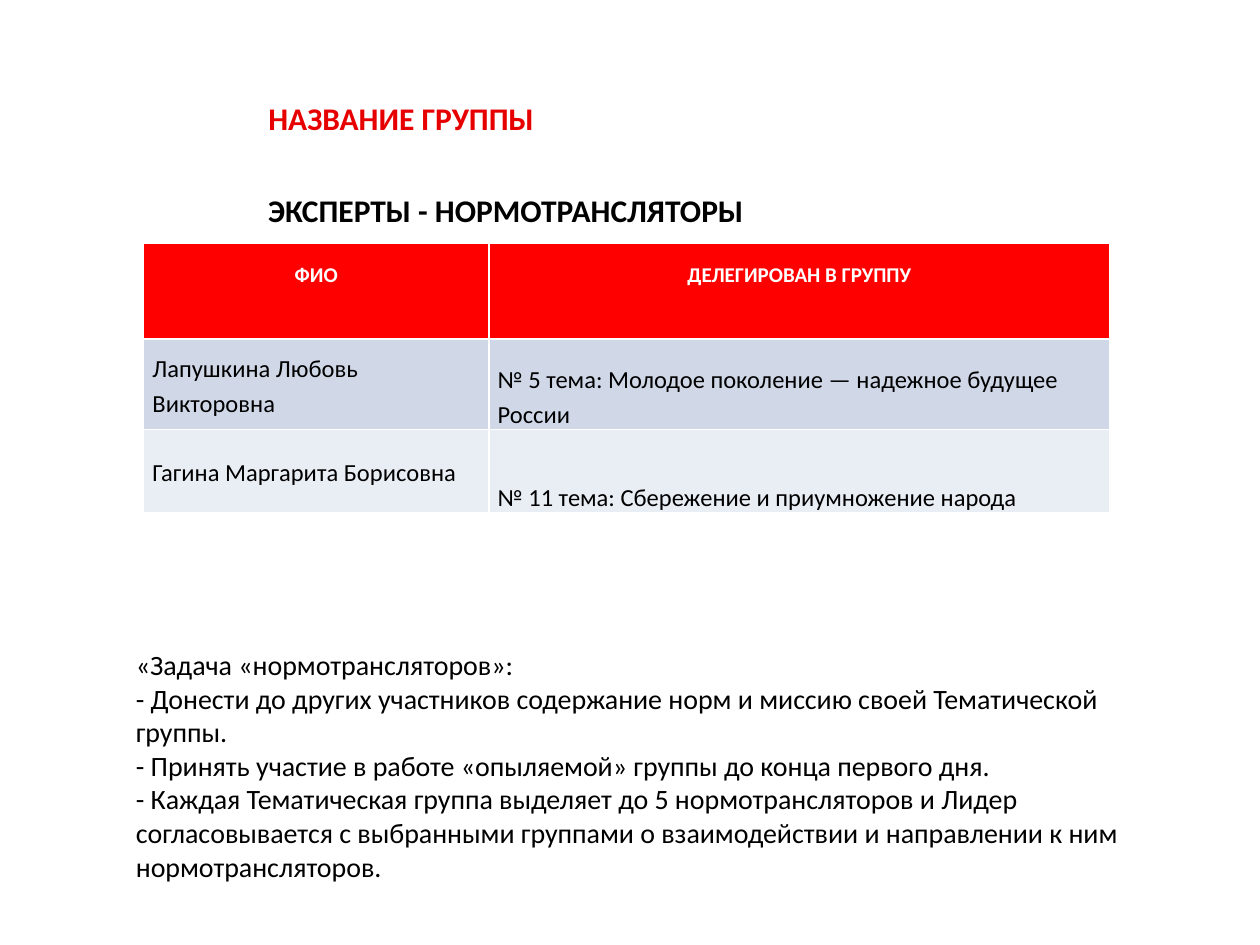
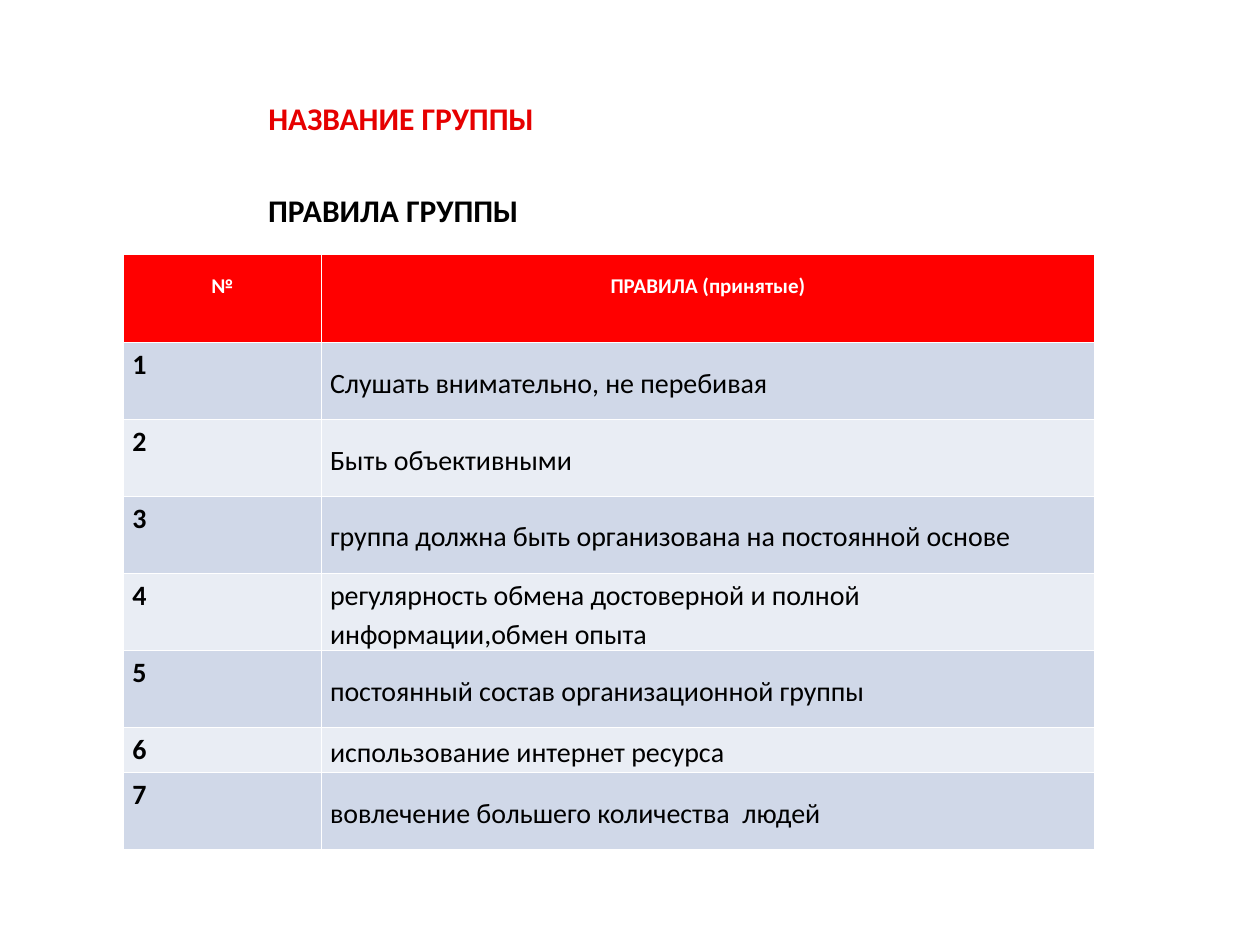
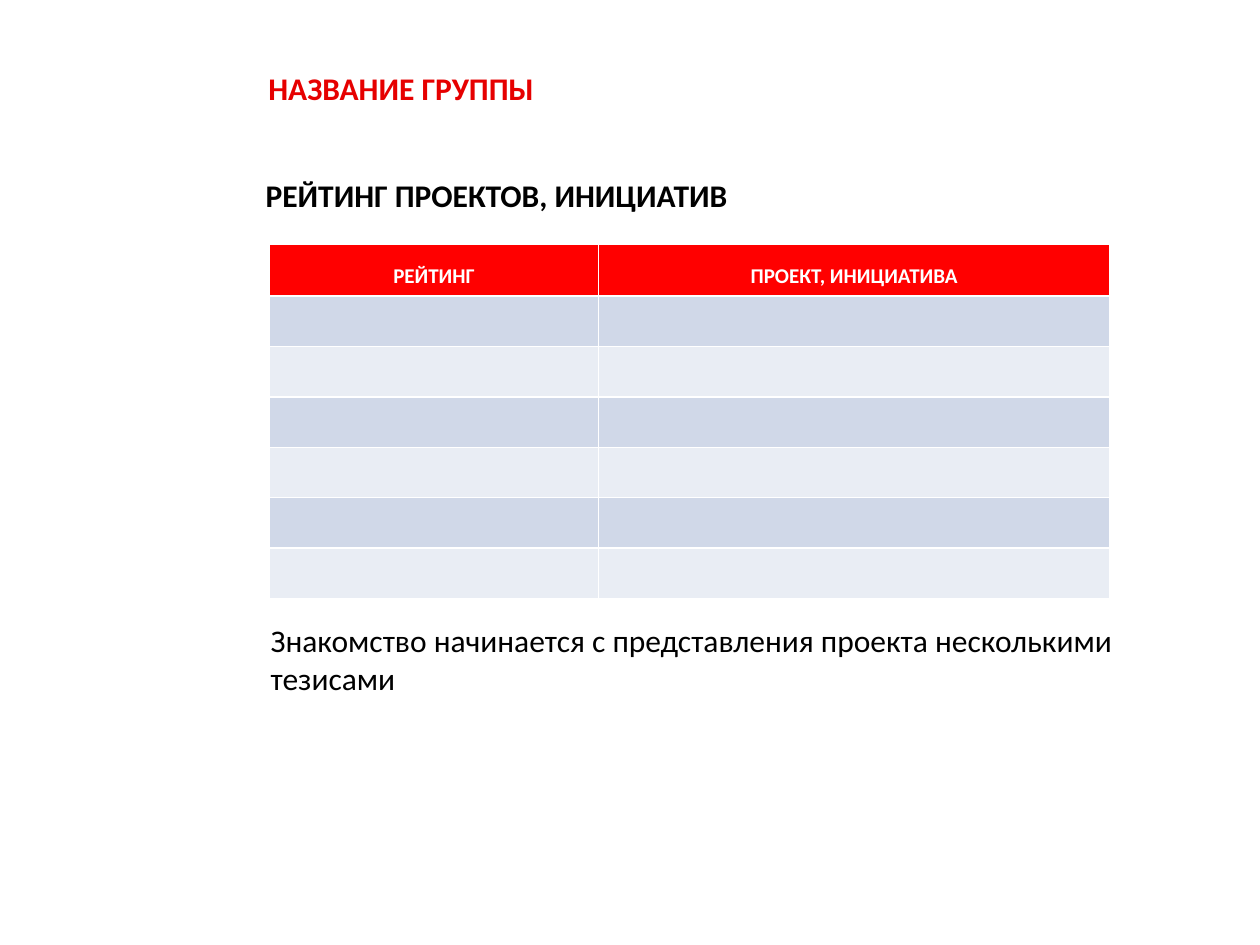
from pptx import Presentation
from pptx.dml.color import RGBColor
from pptx.enum.text import MSO_ANCHOR, MSO_AUTO_SIZE, PP_ALIGN
from pptx.util import Inches, Pt

FONT = "Calibri"
BLACK = "000000"
WHITE = "FFFFFF"
TITLE_RED = "E60000"
HEADER_RED = "FF0000"
BANDS = ("D0D8E8", "E9EDF4")
TITLE_ONLY = 5

GROUP_TITLE = "НАЗВАНИЕ ГРУППЫ"
EXPERTS = [
    ("Лапушкина Любовь Викторовна",
     "№ 5 тема: Молодое поколение — надежное будущее России"),
    ("Гагина Маргарита Борисовна",
     "№ 11 тема: Сбережение и приумножение народа"),
]
EXPERT_TASKS = [
    "«Задача «нормотрансляторов»:",
    "- Донести до других участников содержание норм и миссию своей "
    "Тематической группы.",
    "- Принять участие в работе «опыляемой» группы до конца первого дня.",
    "- Каждая Тематическая группа выделяет до 5 нормотрансляторов и Лидер "
    "согласовывается с выбранными группами о взаимодействии и направлении "
    "к ним нормотрансляторов.",
]
RULES = [
    "Слушать внимательно, не перебивая",
    "Быть объективными",
    "группа должна быть организована на постоянной основе",
    "регулярность обмена достоверной и полной информации,обмен опыта",
    "постоянный состав организационной группы",
    "использование интернет ресурса",
    "вовлечение большего количества  людей",
]
RATING_ROWS = 6


def rgb(hex_color):
    return RGBColor.from_string(hex_color)


def format_text(frame, size, color=BLACK, bold=False,
                align=PP_ALIGN.LEFT, spacing=None):
    for paragraph in frame.paragraphs:
        paragraph.alignment = align
        paragraph.line_spacing = spacing
        for run in paragraph.runs:
            run.font.name = FONT
            run.font.size = Pt(size)
            run.font.bold = bold
            run.font.color.rgb = rgb(color)


def add_text(slide, text, left, top, width, height, size, bold=False, wrap=True):
    box = slide.shapes.add_textbox(
        Inches(left), Inches(top), Inches(width), Inches(height))
    frame = box.text_frame
    frame.text = text
    frame.word_wrap = wrap
    frame.auto_size = MSO_AUTO_SIZE.SHAPE_TO_FIT_TEXT
    format_text(frame, size, bold=bold)


def add_group_slide(prs, title_top, heading, heading_left, heading_top, heading_width):
    """Add a slide with the red group title and a black heading below it."""
    slide = prs.slides.add_slide(prs.slide_layouts[TITLE_ONLY])
    title = slide.shapes.title
    title.left, title.top = Inches(2.03), Inches(title_top)
    title.width, title.height = Inches(7.15), Inches(0.39)
    frame = title.text_frame
    frame.text = GROUP_TITLE
    frame.auto_size = MSO_AUTO_SIZE.NONE
    frame.vertical_anchor = MSO_ANCHOR.MIDDLE
    format_text(frame, 18, TITLE_RED, bold=True)
    add_text(slide, heading, heading_left, heading_top, heading_width, 0.4,
             18, bold=True, wrap=False)
    return slide


def fill_cell(cell, text, color):
    cell.text_frame.text = text
    cell.fill.solid()
    cell.fill.fore_color.rgb = rgb(color)


def add_banded_table(slide, left, top, widths, heights, header, rows,
                     size=18, anchors=(MSO_ANCHOR.MIDDLE, MSO_ANCHOR.MIDDLE),
                     bold_first=False):
    table = slide.shapes.add_table(
        len(heights), len(widths), Inches(left), Inches(top),
        Inches(sum(widths)), Inches(sum(heights))).table
    for column, width in zip(table.columns, widths):
        column.width = Inches(width)
    for row, height in zip(table.rows, heights):
        row.height = Inches(height)

    for col, text in enumerate(header):
        cell = table.cell(0, col)
        fill_cell(cell, text, HEADER_RED)
        format_text(cell.text_frame, 12, WHITE, bold=True,
                    align=PP_ALIGN.CENTER, spacing=1.5)

    for index, texts in enumerate(rows):
        for col, text in enumerate(texts):
            cell = table.cell(index + 1, col)
            fill_cell(cell, text, BANDS[index % 2])
            cell.vertical_anchor = anchors[col]
            cell.margin_left = cell.margin_right = Inches(0.07)
            cell.margin_top = cell.margin_bottom = 0
            format_text(cell.text_frame, size, bold=bold_first and col == 0,
                        spacing=1.15)


def build_experts(prs):
    slide = add_group_slide(prs, 0.74, "ЭКСПЕРТЫ - НОРМОТРАНСЛЯТОРЫ",
                            2.03, 1.47, 4.01)
    add_banded_table(slide, 1.14, 1.93, (2.74, 4.93), (0.76, 0.72, 0.66),
                     ("ФИО", "ДЕЛЕГИРОВАН В ГРУППУ"), EXPERTS, size=14,
                     anchors=(MSO_ANCHOR.MIDDLE, MSO_ANCHOR.BOTTOM))
    add_text(slide, "\n".join(EXPERT_TASKS), 0.98, 5.09, 8.35, 1.99, 16)


def build_rules(prs):
    slide = add_group_slide(prs, 0.74, "ПРАВИЛА ГРУППЫ", 2.03, 1.47, 2.21)
    numbered_rules = [(str(n), rule) for n, rule in enumerate(RULES, start=1)]
    heights = [0.7] + [0.61] * 5 + [0.36, 0.61]
    add_banded_table(slide, 0.98, 2.02, (1.57, 6.14), heights,
                     ("№", "ПРАВИЛА (принятые)"), numbered_rules, size=16,
                     anchors=(MSO_ANCHOR.TOP, MSO_ANCHOR.MIDDLE), bold_first=True)


def build_rating(prs):
    slide = add_group_slide(prs, 0.5, "РЕЙТИНГ ПРОЕКТОВ, ИНИЦИАТИВ",
                            2.01, 1.35, 3.91)
    add_banded_table(slide, 2.14, 1.94, (2.61, 4.06), [0.41] + [0.4] * RATING_ROWS,
                     ("РЕЙТИНГ", "ПРОЕКТ, ИНИЦИАТИВА"), [("", "")] * RATING_ROWS)
    add_text(slide,
             "Знакомство начинается с представления проекта несколькими тезисами",
             2.05, 4.88, 6.97, 0.71, 18)


def main():
    prs = Presentation()
    prs.slide_width, prs.slide_height = Inches(10), Inches(7.5)
    build_experts(prs)
    build_rules(prs)
    build_rating(prs)
    prs.save("out.pptx")


if __name__ == "__main__":
    main()
